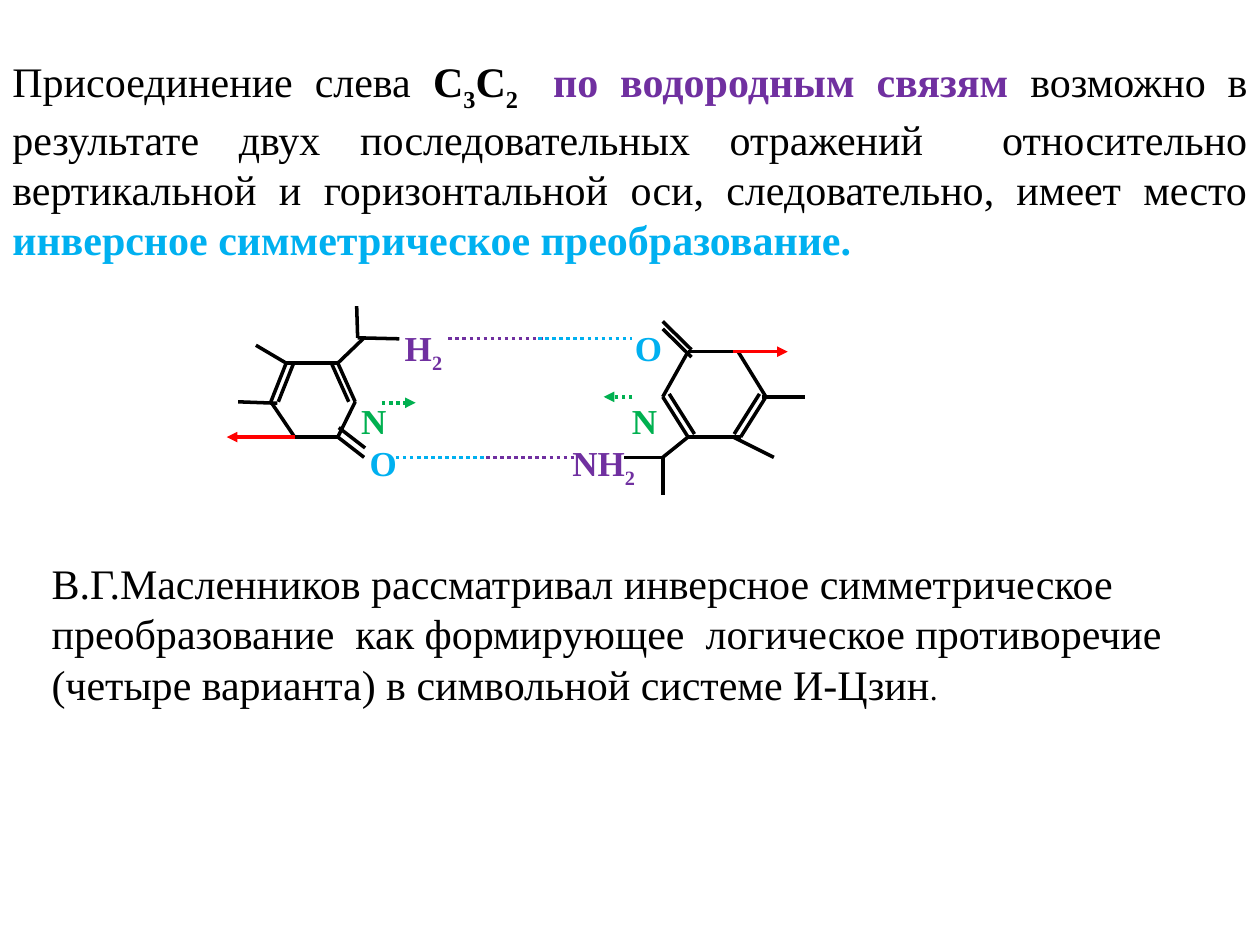
from lxml.etree import SubElement
from pptx import Presentation
from pptx.dml.color import RGBColor
from pptx.enum.dml import MSO_LINE
from pptx.enum.shapes import MSO_CONNECTOR
from pptx.enum.text import PP_ALIGN
from pptx.oxml.ns import qn
from pptx.util import Cm, Pt

BLACK, RED, PURPLE, BLUE, GREEN = "000000", "FF0000", "7030A0", "00B0F0", "00B050"
CORNERS = ["top left", "top right", "right", "bottom right", "bottom left", "left"]


def color(value):
    return RGBColor.from_string(value)


def add_runs(paragraph, parts, size):
    for text, tint, bold, subscript in parts:
        run = paragraph.add_run()
        run.text = text
        run.font.name = "Times New Roman"
        run.font.size = Pt(size)
        run.font.bold = bold
        run.font.color.rgb = color(tint)
        if subscript:
            run.font._element.set("baseline", "-25000")


presentation = Presentation()
presentation.slide_width = Cm(25.4)
presentation.slide_height = Cm(19.05)
slide = presentation.slides.add_slide(presentation.slide_layouts[6])

left_ring = {
    "top": (5.77, 6.81, 7.32),
    "middle": (5.46, 7.16, 8.1),
    "bottom": (5.94, 6.81, 8.81),
    "inner bonds": [("left", "top left", 0.15, 0), ("top right", "right", -0.13, 0)],
    "methyls": [("top left", (0, 0), (-0.61, -0.36)), ("left", (0.13, 0.03), (-0.66, 0))],
    "carbonyl": ("bottom right", (0, 0), (0.53, 0.41)),
    "carbonyl gap": (0.02, -0.19),
    "amine": [
        ("top right", (0, 0), (0.53, -0.51)),
        ("top right", (0.4, -0.51), (0.38, -1.15)),
        ("top right", (0.4, -0.51), (1.24, -0.49)),
    ],
    "red arrow": ("bottom left", (0, 0), (-1.37, 0)),
}
right_ring = {
    "top": (13.87, 14.88, 7.09),
    "middle": (13.36, 15.44, 8),
    "bottom": (13.87, 14.93, 8.81),
    "inner bonds": [("bottom left", "left", 0.13, -0.06), ("right", "bottom right", -0.13, -0.06)],
    "methyls": [("right", (-0.07, 0), (0.79, 0)), ("bottom right", (-0.15, 0), (0.67, 0.41))],
    "carbonyl": ("top left", (0.07, -0.04), (-0.51, -0.61)),
    "carbonyl gap": (0, 0.15),
    "amine": [
        ("bottom left", (0, 0), (-0.51, 0.41)),
        ("bottom left", (-0.51, 0.41), (-1.3, 0.41)),
        ("bottom left", (-0.51, 0.41), (-0.51, 1.17)),
    ],
    "red arrow": ("top right", (-0.1, 0), (1, 0)),
}

lines = []
for ring in (left_ring, right_ring):
    top_left, top_right, top = ring["top"]
    far_left, far_right, middle = ring["middle"]
    bottom_left, bottom_right, bottom = ring["bottom"]
    points = [
        (top_left, top), (top_right, top), (far_right, middle),
        (bottom_right, bottom), (bottom_left, bottom), (far_left, middle),
    ]
    corners = dict(zip(CORNERS, points))

    for start, end in zip(points, points[1:] + points[:1]):
        lines.append((*start, *end, BLACK, False, False))

    for start, end, dx, dy in ring["inner bonds"]:
        (x1, y1), (x2, y2) = corners[start], corners[end]
        lines.append((x1 + dx, y1 + dy, x2 + dx, y2 + dy, BLACK, False, False))

    corner, start, end = ring["carbonyl"]
    gap_x, gap_y = ring["carbonyl gap"]
    second_carbonyl = (corner, (start[0] + gap_x, start[1] + gap_y), (end[0] + gap_x, end[1] + gap_y))
    branches = ring["methyls"] + ring["amine"] + [ring["carbonyl"], second_carbonyl]
    styled_branches = [(*branch, BLACK, False) for branch in branches]
    styled_branches.append((*ring["red arrow"], RED, True))
    for corner, (dx1, dy1), (dx2, dy2), tint, arrow in styled_branches:
        x, y = corners[corner]
        lines.append((x + dx1, y + dy1, x + dx2, y + dy2, tint, False, arrow))

upper_bond, lower_bond = 6.82, 9.22
for start, end, y, tint in [
    (9.04, 10.97, upper_bond, PURPLE), (10.85, 12.75, upper_bond, BLUE),
    (7.98, 9.8, lower_bond, BLUE), (9.8, 11.63, lower_bond, PURPLE),
]:
    lines.append((start, y, end, y, tint, True, False))
for start, end, y in [(7.7, 8.38, 8.12), (12.75, 12.17, 8)]:
    lines.append((start, y, end, y, GREEN, True, True))

for x1, y1, x2, y2, tint, dotted, arrow in lines:
    connector = slide.shapes.add_connector(
        MSO_CONNECTOR.STRAIGHT, Cm(x1), Cm(y1), Cm(x2), Cm(y2))
    connector.line.color.rgb = color(tint)
    connector.line.width = Pt(2)
    if dotted:
        connector.line.dash_style = MSO_LINE.ROUND_DOT
    if arrow:
        SubElement(connector.line._get_or_add_ln(), qn("a:tailEnd"), type="triangle")
    SubElement(connector._element.spPr, qn("a:effectLst"))

atom_rows = [
    (6.58, [("H", "2", 8.16, PURPLE), ("O", "", 12.8, BLUE)]),
    (8.05, [("N", "", 7.28, GREEN), ("N", "", 12.74, GREEN)]),
    (8.9, [("O", "", 7.45, BLUE), ("NH", "2", 11.54, PURPLE)]),
]
for top, atoms in atom_rows:
    for symbol, count, left, tint in atoms:
        label = slide.shapes.add_textbox(Cm(left), Cm(top), Cm(1.4), Cm(0.85))
        frame = label.text_frame
        frame.margin_left = frame.margin_right = frame.margin_top = frame.margin_bottom = 0
        frame.word_wrap = False
        parts = [(symbol, tint, True, False)]
        if count:
            parts.append((count, tint, True, True))
        add_runs(frame.paragraphs[0], parts, 20)

statement = slide.shapes.add_textbox(Cm(0), Cm(1), Cm(25.4), Cm(4.37))
statement.text_frame.word_wrap = True
paragraph = statement.text_frame.paragraphs[0]
paragraph.alignment = PP_ALIGN.JUSTIFY
add_runs(paragraph, [
    ("Присоединение слева ", BLACK, False, False),
    ("C", BLACK, True, False),
    ("3", BLACK, True, True),
    ("C", BLACK, True, False),
    ("2  ", BLACK, True, True),
    ("по водородным связям ", PURPLE, True, False),
    ("возможно в результате двух последовательных отражений  относительно "
     "вертикальной и горизонтальной оси, следовательно, имеет место ", BLACK, False, False),
    ("инверсное симметрическое преобразование.", BLUE, True, False),
], 24)

remark = slide.shapes.add_textbox(Cm(0.79), Cm(11.11), Cm(23.1), Cm(3.33))
remark.text_frame.word_wrap = False
remark_lines = [
    "В.Г.Масленников рассматривал инверсное симметрическое",
    "преобразование  как формирующее  логическое противоречие",
    "(четыре варианта) в символьной системе И-Цзин",
]
remark.text_frame.text = "\n".join(remark_lines)
for paragraph in remark.text_frame.paragraphs:
    font = paragraph.runs[0].font
    font.name = "Times New Roman"
    font.size = Pt(24)
    font.color.rgb = color(BLACK)
add_runs(remark.text_frame.paragraphs[-1], [(".", BLACK, False, False)], 18)

presentation.save("out.pptx")
